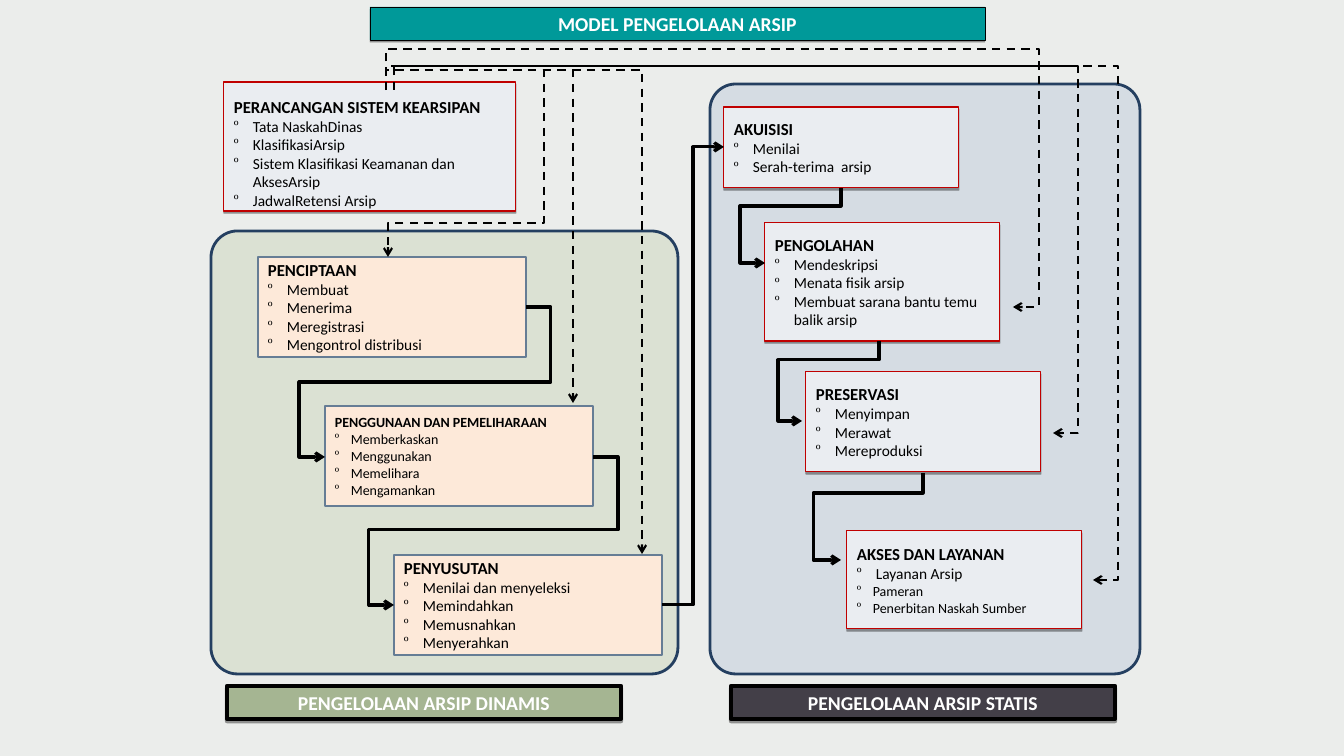
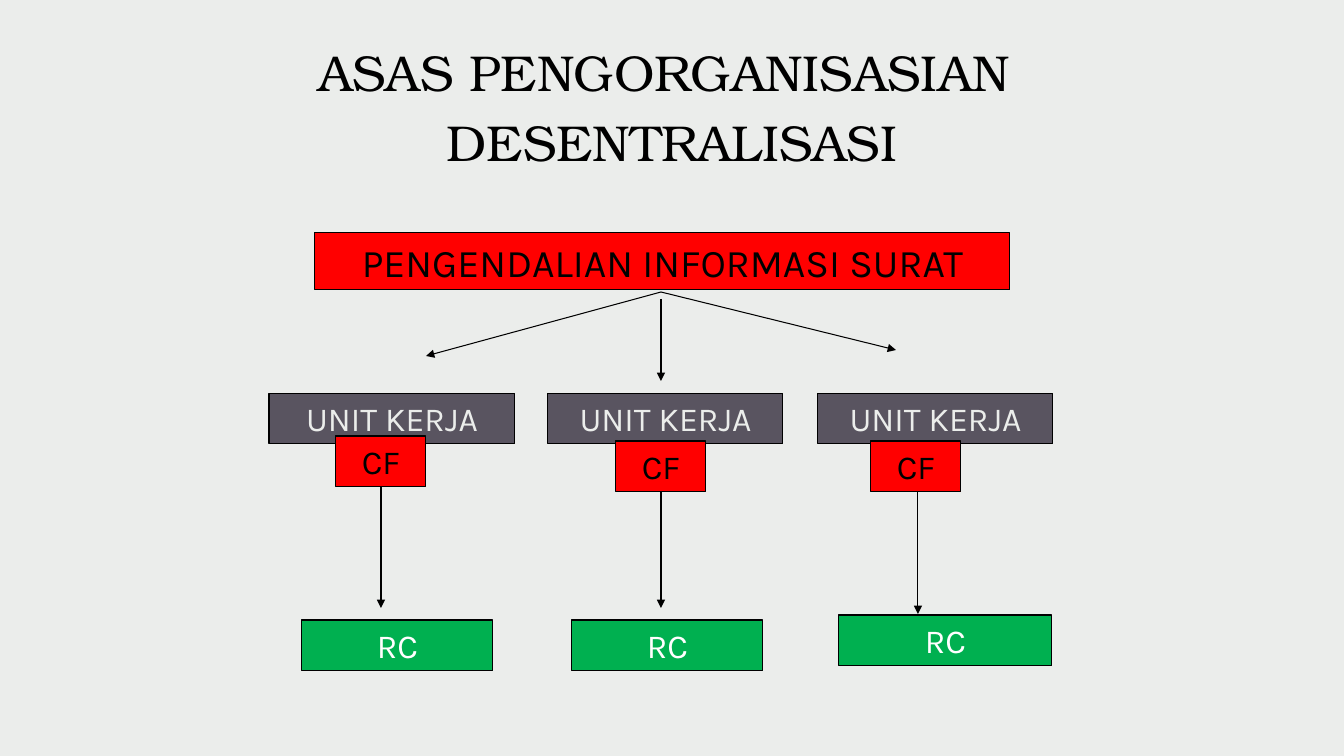
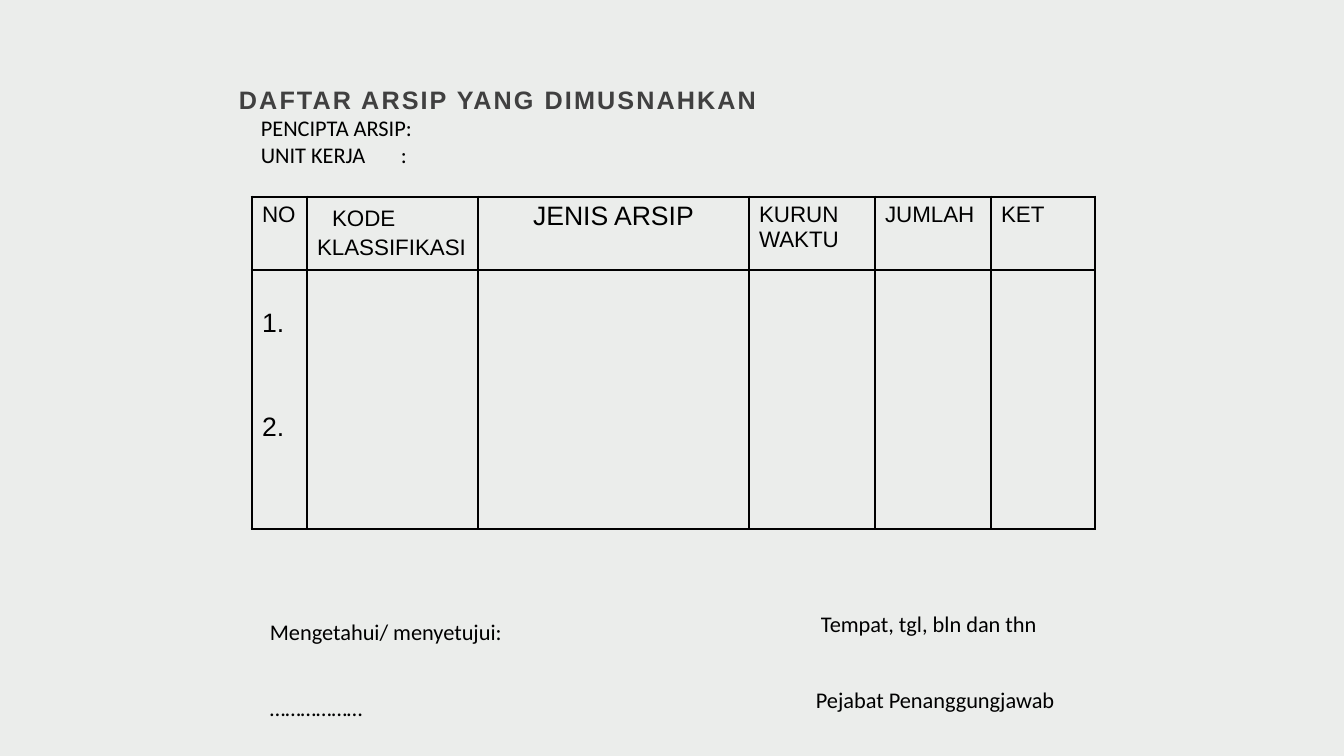
from lxml.etree import SubElement
from pptx import Presentation
from pptx.dml.color import RGBColor
from pptx.enum.dml import MSO_LINE
from pptx.enum.shapes import MSO_CONNECTOR, MSO_SHAPE
from pptx.enum.text import MSO_ANCHOR, MSO_AUTO_SIZE, PP_ALIGN
from pptx.oxml.ns import qn
from pptx.util import Pt

PX = 9072  # EMU in one px; the slide is 1344 by 756 px
COLOURS = {
    "ground": "EBEDEB", "black": "000000", "white": "FFFFFF", "grey": "404040",
    "navy": "243F60", "sage": "DBE1D3", "mist": "D5DCE3", "ice": "EAEDF1",
    "crimson": "C00000", "peach": "FDE9D9", "steel": "667D95", "teal": "009999",
    "olive": "A5B592", "plum": "433F48", "slate": "595460", "red": "FF0000",
    "green": "00B050",
}
RGB = {name: RGBColor.from_string(value) for name, value in COLOURS.items()}


def dress(shape, fill, line, weight, shadow=False):
    """Set fill and outline, and a hard shadow below the shape if asked."""
    shape.shadow.inherit = False
    shape.fill.solid()
    shape.fill.fore_color.rgb = RGB[fill]
    shape.line.color.rgb = RGB[line]
    shape.line.width = Pt(weight)
    if shadow:
        effects = shape.element.spPr.find(qn("a:effectLst"))
        cast = SubElement(effects, qn("a:outerShdw"), blurRad="0", dist=str(Pt(1.6)),
                          dir="5400000", rotWithShape="0")
        tint = SubElement(cast, qn("a:srgbClr"), val=COLOURS["black"])
        SubElement(tint, qn("a:alpha"), val="38000")


def connect(page, start, end, weight, head, axis="", bends=(), dash=False):
    """Draw an arrow; bends alternate between coordinates along axis and across it."""
    kind = MSO_CONNECTOR.ELBOW if bends else MSO_CONNECTOR.STRAIGHT
    arrow = page.shapes.add_connector(kind, *(value * PX for value in start + end))
    properties = arrow.element.spPr
    if bends:
        along = 0 if axis == "h" else 1
        geometry = properties.find(qn("a:prstGeom"))
        geometry.set("prst", f"bentConnector{len(bends) + 2}")
        guides = geometry.find(qn("a:avLst"))
        for index, bend in enumerate(bends):
            side = (along + index) % 2
            share = (bend - start[side]) / (end[side] - start[side])
            SubElement(guides, qn("a:gd"), name=f"adj{index + 1}",
                       fmla=f"val {round(share * 100000)}")
    if axis == "v":  # a quarter turn about the centre swaps width and height
        width, height = arrow.width, arrow.height
        arrow.left += (width - height) // 2
        arrow.top += (height - width) // 2
        arrow.width, arrow.height = height, width
        rightward = end[0] > start[0]
        frame = properties.find(qn("a:xfrm"))
        frame.set("rot", str((270 if rightward else 90) * 60000))
        frame.set("flipH", str(int(rightward)))
    arrow.line.color.rgb = RGB["black"]
    arrow.line.width = Pt(weight)
    if dash:
        arrow.line.dash_style = MSO_LINE.DASH
    SubElement(properties.find(qn("a:ln")), qn("a:tailEnd"), type=head)
    SubElement(properties, qn("a:effectLst"))


deck = Presentation()
deck.slide_width, deck.slide_height = 1344 * PX, 756 * PX
ground = deck.slide_master.background.fill
ground.solid()
ground.fore_color.rgb = RGB["ground"]

# Pages and their titles
titles = [
    ((370, 7, 615, 33), "Calibri", 14, "white", True, PP_ALIGN.CENTER, MSO_ANCHOR.MIDDLE,
     ["MODEL PENGELOLAAN ARSIP"]),
    ((168, 36, 1008, 144), "TeX Gyre Bonum", 36, "black", False, PP_ALIGN.CENTER,
     MSO_ANCHOR.TOP, ["ASAS PENGORGANISASIAN ", "DESENTRALISASI"]),
    ((227, 73, 907, 36), "Arial", 18, "grey", True, PP_ALIGN.LEFT, MSO_ANCHOR.MIDDLE,
     ["DAFTAR ARSIP YANG DIMUSNAHKAN"]),
]
pages = []
for box, font, size, colour, bold, align, anchor, lines in titles:
    page = deck.slides.add_slide(deck.slide_layouts[5])
    pages.append(page)
    title = page.shapes.title
    title.left, title.top, title.width, title.height = (value * PX for value in box)
    frame = title.text_frame
    frame.word_wrap = True
    frame.auto_size = MSO_AUTO_SIZE.NONE
    frame.vertical_anchor = anchor
    for index, line in enumerate(lines):
        para = frame.add_paragraph() if index else frame.paragraphs[0]
        para.alignment = align
        para.space_before = Pt(7 if index else 0)
        span = para.add_run()
        span.text = line
        span.font.name, span.font.size, span.font.bold = font, Pt(size), bold
        span.font.color.rgb = RGB[colour]
model, organisation, disposal = pages

# Model: two areas, cards, flows and captions
dress(model.shapes.title, "teal", "black", 0.25, shadow=True)
for box, fill in [((211, 231, 467, 443), "sage"), ((710, 84, 430, 590), "mist")]:
    area = model.shapes.add_shape(MSO_SHAPE.ROUNDED_RECTANGLE, *(value * PX for value in box))
    area.adjustments[0] = 0.06
    dress(area, fill, "navy", 2)

planning = ("ice", "crimson", 0.75, True)
dynamic = ("peach", "steel", 2, False)
cards = [
    ((224, 82, 292, 129), planning, 12, "PERANCANGAN SISTEM KEARSIPAN",
     [("Tata NaskahDinas", 11), ("KlasifikasiArsip", 11),
      ("Sistem Klasifikasi Keamanan dan AksesArsip", 11), ("JadwalRetensi Arsip", 11)]),
    ((258, 257, 268, 100), dynamic, 12, "PENCIPTAAN",
     [("Membuat", 11), ("Menerima", 11), ("Meregistrasi", 11), ("Mengontrol distribusi", 11)]),
    ((325, 406, 268, 100), dynamic, 10, "PENGGUNAAN DAN PEMELIHARAAN",
     [("Memberkaskan", 10), ("Menggunakan", 10), ("Memelihara", 10), ("Mengamankan", 10)]),
    ((394, 555, 268, 100), dynamic, 12, "PENYUSUTAN",
     [("Menilai dan menyeleksi", 11), ("Memindahkan", 11), ("Memusnahkan", 11),
      ("Menyerahkan", 11)]),
    ((724, 107, 235, 81), planning, 12, "AKUISISI",
     [("Menilai", 11), ("Serah-terima  arsip", 11)]),
    ((765, 223, 235, 118), planning, 12, "PENGOLAHAN",
     [("Mendeskripsi", 11), ("Menata fisik arsip", 11),
      ("Membuat sarana bantu temu balik arsip", 11)]),
    ((806, 372, 235, 100), planning, 12, "PRESERVASI",
     [("Menyimpan", 11), ("Merawat", 11), ("Mereproduksi", 11)]),
    ((847, 531, 235, 98), planning, 12, "AKSES DAN LAYANAN",
     [("Layanan Arsip", 11), ("Pameran", 10), ("Penerbitan Naskah Sumber", 10)]),
]
for box, look, heading_size, heading, items in cards:
    card = model.shapes.add_shape(MSO_SHAPE.FLOWCHART_PROCESS, *(value * PX for value in box))
    dress(card, *look)
    frame = card.text_frame
    frame.vertical_anchor = MSO_ANCHOR.MIDDLE
    if heading == "PERANCANGAN SISTEM KEARSIPAN":
        frame.margin_top = 18 * PX
    for index, (text, size) in enumerate([(heading, heading_size)] + items):
        para = frame.add_paragraph() if index else frame.paragraphs[0]
        para.alignment = PP_ALIGN.LEFT
        if index:
            indent = (19 if size == 11 else 16) * PX
            layout = para._p.get_or_add_pPr()
            layout.set("marL", str(indent))
            layout.set("indent", str(-indent))
            SubElement(layout, qn("a:buFont"), typeface="Times New Roman")
            SubElement(layout, qn("a:buChar"), char="º")
        span = para.add_run()
        span.text = text
        span.font.name, span.font.size, span.font.bold = "Calibri", Pt(size), index == 0
        span.font.color.rgb = RGB["black"]

flows = [
    ((526, 307), (325, 457), "h", (551, 382, 299)),
    ((593, 457), (394, 605), "h", (618, 530, 369)),
    ((662, 605), (724, 147), "h", (693,)),
    ((841, 188), (765, 263), "v", (206, 740)),
    ((879, 341), (802, 421), "v", (360, 778)),
    ((923, 473), (841, 560), "v", (493, 813)),
]
for start, end, axis, bends in flows:
    connect(model, start, end, 2.25, "arrow", axis, bends)
guidance = [
    ((386, 90), (388, 257), (70, 545, 223)),
    ((386, 90), (573, 403), (70,)),
    ((386, 90), (642, 554), (70,)),
    ((386, 90), (1093, 580), (66, 1118)),
    ((394, 90), (1053, 433), (66, 1078)),
    ((386, 76), (1013, 307), (49, 1039)),
]
for start, end, bends in guidance:
    connect(model, start, end, 1.5, "arrow", "v", bends, dash=True)

for left, width, fill, text in [(731, 384, "plum", "PENGELOLAAN ARSIP STATIS"),
                                (227, 394, "olive", "PENGELOLAAN ARSIP DINAMIS")]:
    caption = model.shapes.add_shape(MSO_SHAPE.FLOWCHART_PROCESS, left * PX, 686 * PX,
                                     width * PX, 33 * PX)
    dress(caption, fill, "black", 3, shadow=True)
    caption.text_frame.vertical_anchor = MSO_ANCHOR.MIDDLE
    para = caption.text_frame.paragraphs[0]
    para.alignment = PP_ALIGN.CENTER
    span = para.add_run()
    span.text = text
    span.font.name, span.font.size, span.font.bold = "Calibri", Pt(14), True
    span.font.color.rgb = RGB["white"]

# Organisation: one control box, three units
arrows = [
    ((661, 299), (661, 381)), ((661, 292), (426, 356)), ((661, 292), (896, 350)),
    ((381, 457), (381, 608)), ((661, 469), (661, 608)), ((918, 469), (918, 614)),
]
for start, end in arrows:
    connect(organisation, start, end, 0.75, "triangle")
boxes = [((315, 233, 695, 57), "red", "black", 28, "PENGENDALIAN INFORMASI SURAT")]
for unit, file, centre in [((269, 246), (336, 436), (302, 620, 191)),
                           ((548, 235), (616, 441), (572, 620, 191)),
                           ((818, 235), (871, 441), (839, 615, 213))]:
    boxes += [((unit[0], 393, unit[1], 51), "slate", "ground", 24, "UNIT KERJA"),
              (file + (90, 51), "red", "black", 24, "CF"),
              (centre + (51,), "green", "white", 24, "RC")]
for box, fill, colour, size, text in boxes:
    block = organisation.shapes.add_shape(MSO_SHAPE.RECTANGLE, *(value * PX for value in box))
    dress(block, fill, "black", 0.75)
    block.text_frame.vertical_anchor = MSO_ANCHOR.TOP
    para = block.text_frame.paragraphs[0]
    para.alignment = PP_ALIGN.CENTER
    span = para.add_run()
    span.text = text
    span.font.name, span.font.size = "Karla", Pt(size)
    span.font.color.rgb = RGB[colour]

# Disposal list: heading details, table, signatures
frame = disposal.shapes.title.text_frame
frame.margin_left = frame.margin_top = frame.margin_right = 12 * PX
frame.margin_bottom = 10 * PX
frame.paragraphs[0].line_spacing = 1.5
frame.paragraphs[0].runs[0]._r.get_or_add_rPr().set("spc", "150")

widths = [55, 171, 271, 126, 116, 104]
heights = [73, 259]
table = disposal.shapes.add_table(len(heights), len(widths), 252 * PX, 197 * PX,
                                  sum(widths) * PX, sum(heights) * PX).table
table.first_row = table.horz_banding = False
for column, width in zip(table.columns, widths):
    column.width = width * PX
for row, height in zip(table.rows, heights):
    row.height = height * PX
# Each cell: lines, size, space between lines, top margin
contents = {
    (0, 0): (["NO"], 16, 0, 5),
    (0, 1): (["KODE", "KLASSIFIKASI"], 16, 3, 9),
    (0, 2): (["JENIS ARSIP"], 19, 0, 5),
    (0, 3): (["KURUN WAKTU"], 16, 0, 5),
    (0, 4): (["JUMLAH"], 16, 0, 5),
    (0, 5): (["KET"], 16, 0, 5),
    (1, 0): (["1.", "2."], 19, 53, 39),
}
for row in range(len(heights)):
    for column in range(len(widths)):
        cell = table.cell(row, column)
        outer = {"lnL": column == 0, "lnR": column == len(widths) - 1,
                 "lnT": row == 0, "lnB": row == len(heights) - 1}
        for edge, thick in outer.items():
            border = SubElement(cell._tc.get_or_add_tcPr(), qn(f"a:{edge}"),
                                w=str(Pt(2.25 if thick else 1)))
            paint = SubElement(border, qn("a:solidFill"))
            SubElement(paint, qn("a:srgbClr"), val=COLOURS["black"])
        cell.fill.background()
        lines, size, gap, margin = contents.get((row, column), ([], 0, 0, 5))
        cell.margin_top = margin * PX
        for index, line in enumerate(lines):
            para = cell.text_frame.add_paragraph() if index else cell.text_frame.paragraphs[0]
            para.space_before = Pt(gap if index else 0)
            if line == "JENIS ARSIP":
                para.alignment = PP_ALIGN.CENTER
            if line == "KODE":
                para._p.get_or_add_pPr().set("marL", str(15 * PX))
            span = para.add_run()
            span.text = line
            span.font.name, span.font.size = "Arial", Pt(size)
            span.font.color.rgb = RGB["black"]

notes = [
    ((251, 109, 277, 65), 0, ["PENCIPTA ARSIP:", "UNIT KERJA\t:"]),
    ((806, 605, 328, 119), 35, ["Tempat, tgl, bln dan thn", "Pejabat Penanggungjawab"]),
    ((260, 613, 294, 119), 35, ["Mengetahui/ menyetujui:", "………………"]),
]
for box, gap, lines in notes:
    frame = disposal.shapes.add_textbox(*(value * PX for value in box)).text_frame
    frame.word_wrap = True
    for index, line in enumerate(lines):
        para = frame.add_paragraph() if index else frame.paragraphs[0]
        para.space_before = Pt(gap if index else 0)
        layout = para._p.get_or_add_pPr()
        if "\t" in line:
            stops = SubElement(layout, qn("a:tabLst"))
            SubElement(stops, qn("a:tab"), pos=str(140 * PX), algn="l")
        if line.startswith("Tempat"):
            layout.set("marL", str(5 * PX))
        span = para.add_run()
        span.text = line
        span.font.name, span.font.size = "Calibri", Pt(16)
        span.font.color.rgb = RGB["black"]

deck.save("out.pptx")
